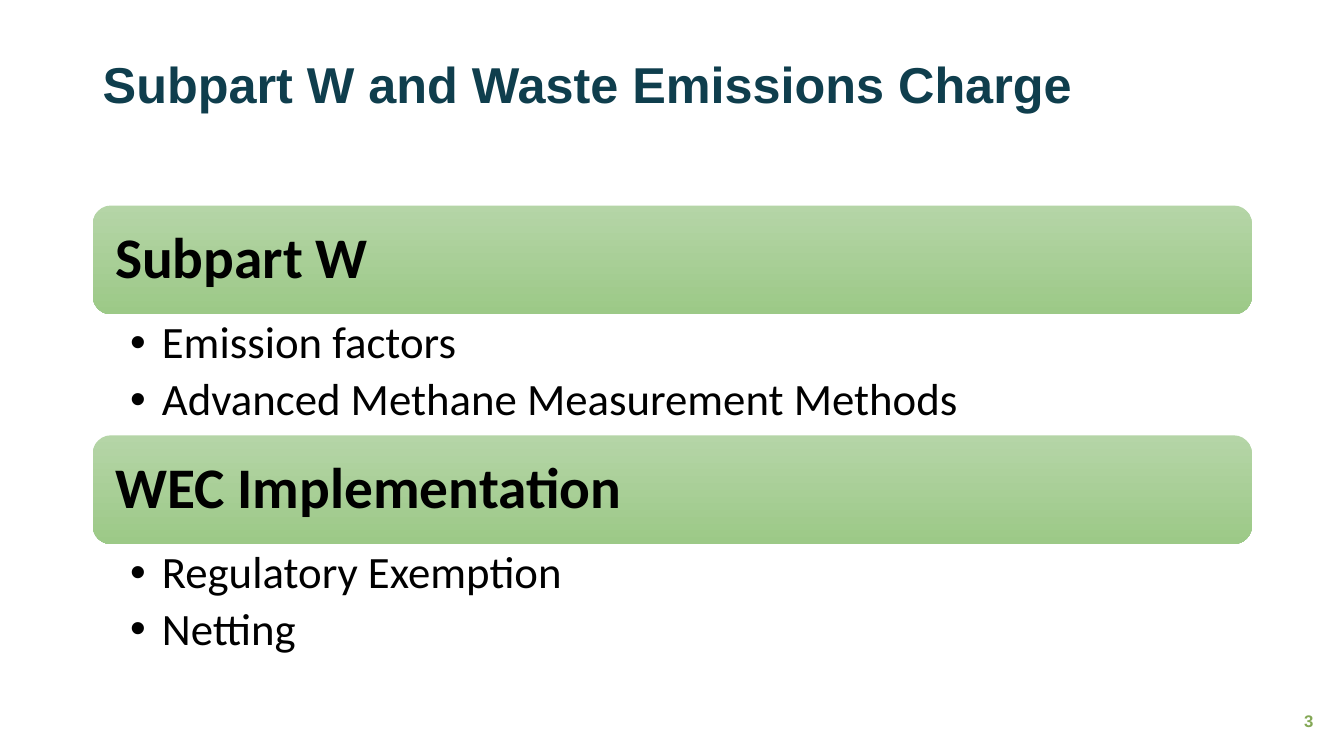
from lxml import etree
from pptx import Presentation
from pptx.dml.color import RGBColor
from pptx.enum.shapes import MSO_SHAPE
from pptx.enum.text import MSO_ANCHOR, PP_ALIGN
from pptx.oxml.ns import qn
from pptx.util import Cm, Pt

ROUNDED = MSO_SHAPE.ROUNDED_RECTANGLE
MIDDLE, TOP = MSO_ANCHOR.MIDDLE, MSO_ANCHOR.TOP
LEFT, RIGHT = PP_ALIGN.LEFT, PP_ALIGN.RIGHT

CONTENT_LEFT, CONTENT_WIDTH = 2.34, 29.21
SECTIONS_TOP, BANNER_HEIGHT, LIST_HEIGHT = 5.18, 2.74, 3.05
SECTIONS = [
    ("Subpart W", ["Emission factors", "Advanced Methane Measurement Methods"]),
    ("WEC Implementation", ["Regulatory Exemption", "Netting"]),
]


def color(hex_string):
    return RGBColor.from_string(hex_string)


def set_frame(shape, anchor, side, vertical):
    """Wrap the text of a shape, anchor it and set its insets in centimetres."""
    frame = shape.text_frame
    frame.word_wrap = True
    frame.vertical_anchor = anchor
    frame.margin_left = frame.margin_right = Cm(side)
    frame.margin_top = frame.margin_bottom = Cm(vertical)
    return frame


def style(para, font, size, hex_string, bold=False, align=LEFT, spacing=0.9):
    para.alignment = align
    para.line_spacing = spacing
    for span in para.runs:
        span.font.name = font
        span.font.size = Pt(size)
        span.font.bold = bold
        span.font.color.rgb = color(hex_string)


def add_bullet(para, indent):
    properties = para._p.get_or_add_pPr()
    properties.set("marL", str(Cm(indent)))
    properties.set("indent", str(-Cm(indent)))
    etree.SubElement(properties, qn("a:buFont")).set("typeface", "Arial")
    etree.SubElement(properties, qn("a:buChar")).set("char", "•")


def add_label(page, box, text, size, hex_string, align=LEFT):
    """Add one line of bold Arial, centred vertically in the box."""
    label = page.shapes.add_textbox(*map(Cm, box))
    frame = set_frame(label, MIDDLE, 0.25, 0.13)
    frame.text = text
    style(frame.paragraphs[0], "Arial", size, hex_string, True, align)


def add_banner(page, box, heading):
    banner = page.shapes.add_shape(ROUNDED, *map(Cm, box))
    banner.shadow.inherit = False
    banner.line.fill.background()
    banner.fill.gradient()
    banner.fill.gradient_angle = 270
    for stop, shade in zip(banner.fill.gradient_stops, ("B5D5A7", "9CC987")):
        stop.color.rgb = color(shade)
    frame = set_frame(banner, MIDDLE, 0.43, 0.43)
    frame.text = heading
    style(frame.paragraphs[0], "Calibri", 41, "000000", True)


def add_list(page, box, items):
    listing = page.shapes.add_textbox(*map(Cm, box))
    frame = set_frame(listing, TOP, 0.94, 0.15)
    frame.text = "\n".join(items)
    for para in frame.paragraphs:
        add_bullet(para, 0.8)
        style(para, "Calibri", 32, "000000")
        para.space_after = Pt(6)


def add_section(page, box, heading, items):
    left, top, width, height = box
    add_banner(page, (left, top, width, BANNER_HEIGHT), heading)
    list_box = (left, top + BANNER_HEIGHT, width, height - BANNER_HEIGHT)
    add_list(page, list_box, items)


def main():
    deck = Presentation()
    deck.slide_width, deck.slide_height = Cm(33.87), Cm(19.05)
    page = deck.slides.add_slide(deck.slide_layouts[6])

    add_label(page, (CONTENT_LEFT, 0.36, CONTENT_WIDTH, 3.68),
              "Subpart W and Waste Emissions Charge", 36, "0F3E4D")
    section_height = BANNER_HEIGHT + LIST_HEIGHT
    for index, (heading, items) in enumerate(SECTIONS):
        top = SECTIONS_TOP + index * section_height
        add_section(page, (CONTENT_LEFT, top, CONTENT_WIDTH, section_height),
                    heading, items)
    add_label(page, (31.55, 17.68, 1.8, 1.02), "3", 12, "84A856", RIGHT)

    deck.save("out.pptx")


if __name__ == "__main__":
    main()
